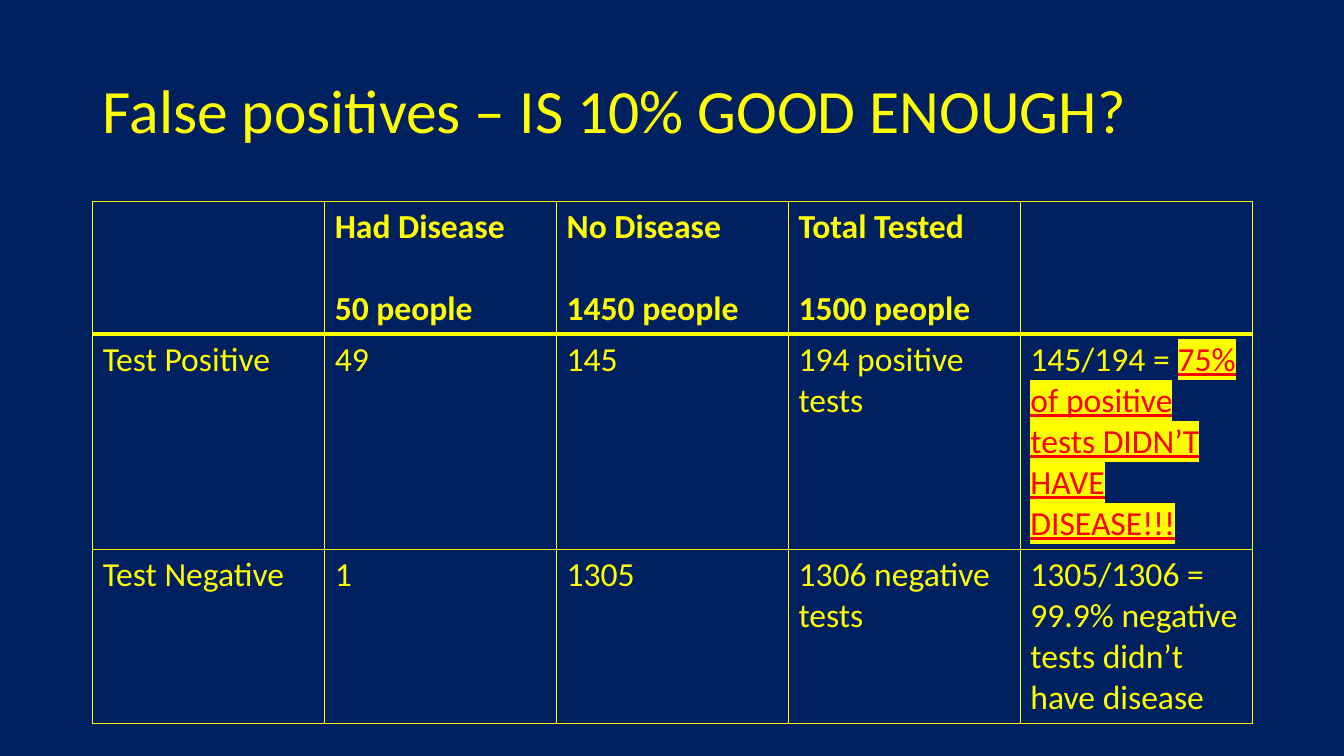
"""Build a slide on how many positive tests are false positives."""
from dataclasses import dataclass

from lxml.etree import SubElement
from pptx import Presentation
from pptx.dml.color import RGBColor as Rgb
from pptx.enum.text import MSO_ANCHOR as Anchor, MSO_AUTO_SIZE as AutoSize, PP_ALIGN as Align
from pptx.oxml import parse_xml
from pptx.oxml.ns import nsdecls, qn
from pptx.slide import Slide
from pptx.table import _Cell as Cell
from pptx.text.text import _Paragraph as Paragraph
from pptx.util import Inches, Pt


@dataclass(frozen=True)
class Theme:
    navy: str = "002060"
    yellow: str = "FFFF00"
    red: str = "FF0000"
    font: str = "Calibri"
    title_size: int = 44
    cell_size: int = 24
    header_gap: int = 29
    rule: int = 1
    header_rule: int = 3


@dataclass(frozen=True)
class Words:
    text: str
    bold: bool = False
    alarming: bool = False


@dataclass(frozen=True)
class Grid:
    left: float = 0.92
    title_top: float = 0.4
    title_height: float = 1.45
    table_top: float = 2.0
    column: float = 2.3
    row: float = 1.3


Lines = list[list[Words]]
THEME = Theme()
GRID = Grid()


def header(group: str, people: str) -> Lines:
    return [[Words(group, bold=True)], [Words(people, bold=True)]]


def result(text: str, alarm: str = "") -> Lines:
    finding = [Words(text)]
    return [finding + [Words(alarm, alarming=True)] if alarm else finding]


RESULTS: list[list[Lines]] = [
    [[], header("Had Disease", "50 people"), header("No Disease", "1450 people"),
     header("Total Tested", "1500 people"), []],
    [result("Test Positive"), result("49"), result("145"), result("194 positive tests"),
     result("145/194 = ", "75% of positive tests DIDN’T HAVE DISEASE!!!")],
    [result("Test Negative"), result("1"), result("1305"), result("1306 negative tests"),
     result("1305/1306 = 99.9% negative tests didn’t have disease")],
]


def add_words(paragraph: Paragraph, words: Words, size: int) -> None:
    run = paragraph.add_run()
    run.text = words.text
    run.font.name = THEME.font
    run.font.size = Pt(size)
    run.font.bold = words.bold
    run.font.color.rgb = Rgb.from_string(THEME.red if words.alarming else THEME.yellow)
    if words.alarming:
        run.font.underline = True
        highlight = parse_xml(
            f'<a:highlight {nsdecls("a")}><a:srgbClr val="{THEME.yellow}"/></a:highlight>')
        run.font._element.find(qn("a:solidFill")).addnext(highlight)


def add_border(cell: Cell, side: str, width: int) -> None:
    border = SubElement(cell._tc.get_or_add_tcPr(), qn(f"a:ln{side}"), w=str(Pt(width)))
    SubElement(SubElement(border, qn("a:solidFill")), qn("a:srgbClr"), val=THEME.yellow)


def fill_cell(cell: Cell, lines: Lines, widths: dict[str, int]) -> None:
    for side, width in widths.items():
        add_border(cell, side, width)
    cell.fill.solid()
    cell.fill.fore_color.rgb = Rgb.from_string(THEME.navy)
    for index, line in enumerate(lines):
        paragraph = cell.text_frame.add_paragraph() if index else cell.text_frame.paragraphs[0]
        if index:
            paragraph.space_before = Pt(THEME.header_gap)
        for words in line:
            add_words(paragraph, words, THEME.cell_size)


def add_title(slide: Slide, text: str) -> None:
    title = slide.shapes.title
    title.left, title.top = Inches(GRID.left), Inches(GRID.title_top)
    title.width = Inches(GRID.column * len(RESULTS[0]))
    title.height = Inches(GRID.title_height)
    frame = title.text_frame
    frame.auto_size = AutoSize.NONE
    frame.vertical_anchor = Anchor.MIDDLE
    paragraph = frame.paragraphs[0]
    paragraph.alignment = Align.LEFT
    paragraph.line_spacing = 0.9
    add_words(paragraph, Words(text), THEME.title_size)


def add_results(slide: Slide) -> None:
    rows, columns = len(RESULTS), len(RESULTS[0])
    table = slide.shapes.add_table(
        rows, columns, Inches(GRID.left), Inches(GRID.table_top),
        Inches(GRID.column * columns), Inches(GRID.row * rows)).table
    table.first_row = table.horz_banding = False
    for row, findings in enumerate(RESULTS):
        widths = dict.fromkeys("LRTB", THEME.rule)
        if row < 2:
            widths["T" if row else "B"] = THEME.header_rule
        for column, lines in enumerate(findings):
            fill_cell(table.cell(row, column), lines, widths)


def main() -> None:
    deck = Presentation()
    deck.slide_width, deck.slide_height = Inches(13.33), Inches(7.5)
    slide = deck.slides.add_slide(deck.slide_layouts[5])
    slide.background.fill.solid()
    slide.background.fill.fore_color.rgb = Rgb.from_string(THEME.navy)
    add_title(slide, "False positives – IS 10% GOOD ENOUGH?")
    add_results(slide)
    deck.save("out.pptx")


if __name__ == "__main__":
    main()
